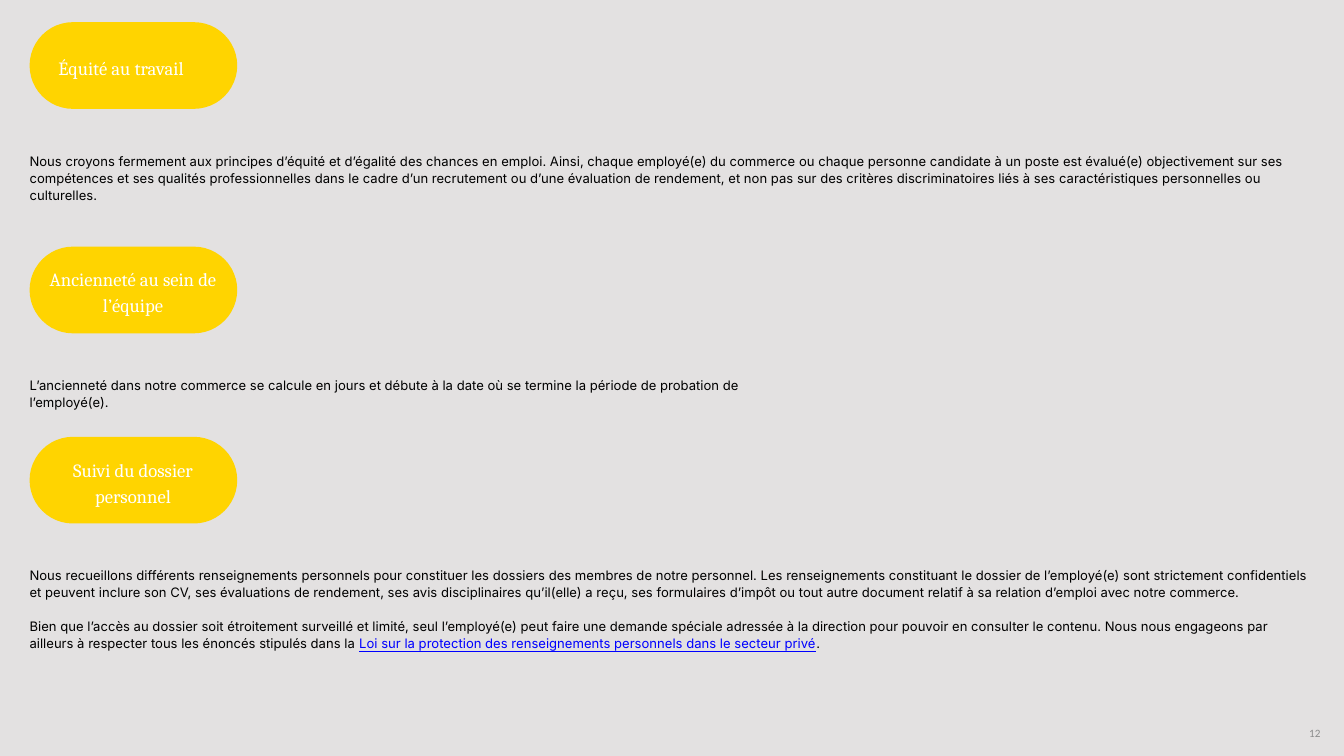
from pptx import Presentation
from pptx.dml.color import RGBColor
from pptx.enum.shapes import MSO_SHAPE
from pptx.enum.text import MSO_ANCHOR, PP_ALIGN
from pptx.util import Emu, Pt

PX = 9144  # 100 px to the inch
COLORS = {"page": "E3E1E1", "pill": "FFD400", "title": "FFFFFF",
          "body": "000000", "link": "0000FF", "number": "8C8C8C"}
LEFT, WIDE = 44, 1913
PILL_WIDTH, PILL_HEIGHT = 309, 129


def px(*lengths):
    return [Emu(length * PX) for length in lengths]


def add_text(place, paragraphs, font, size, color, line=None, align=PP_ALIGN.LEFT):
    """Each paragraph is a list of spans; returns the text frame."""
    frame = page.shapes.add_textbox(*px(*place)).text_frame
    frame.word_wrap = True
    frame.margin_left = frame.margin_right = frame.margin_top = frame.margin_bottom = 0
    for index, spans in enumerate(paragraphs):
        paragraph = frame.add_paragraph() if index else frame.paragraphs[0]
        paragraph.alignment = align
        if line:
            paragraph.line_spacing = Pt(line)
        if index:
            paragraph.space_before = Pt(line)
        for words in spans:
            span = paragraph.add_run()
            span.text = words
            span.font.name = font
            span.font.size = Pt(size)
            span.font.color.rgb = RGBColor.from_string(COLORS[color])
    return frame


deck = Presentation()
deck.slide_width, deck.slide_height = px(2000, 1125)
page = deck.slides.add_slide(deck.slide_layouts[6])
page.background.fill.solid()
page.background.fill.fore_color.rgb = RGBColor.from_string(COLORS["page"])

# Section headings on yellow pills: pill top, text place, words, alignment
headings = [
    (33, (87, 79, 224, 36), "Équité au travail", PP_ALIGN.LEFT),
    (367, (68, 393, 260, 75), "Ancienneté au sein de l’équipe", PP_ALIGN.CENTER),
    (650, (68, 677, 260, 75), "Suivi du dossier personnel", PP_ALIGN.CENTER),
]
for top, place, words, align in headings:
    pill = page.shapes.add_shape(MSO_SHAPE.ROUNDED_RECTANGLE,
                                 *px(LEFT, top, PILL_WIDTH, PILL_HEIGHT))
    pill.adjustments[0] = 0.5
    pill.shadow.inherit = False
    pill.fill.solid()
    pill.fill.fore_color.rgb = RGBColor.from_string(COLORS["pill"])
    pill.line.fill.background()
    add_text(place, [[words]], "Cambria", 20, "title", 28, align)

# Body text: place, paragraphs
bodies = [
    ((LEFT, 226, WIDE, 74), [[
        "Nous croyons fermement aux principes d’équité et d’égalité des chances en emploi. "
        "Ainsi, chaque employé(e) du commerce ou chaque personne candidate à un poste est "
        "évalué(e) objectivement sur ses compétences et ses qualités professionnelles dans "
        "le cadre d’un recrutement ou d’une évaluation de rendement, et non pas sur des "
        "critères discriminatoires liés à ses caractéristiques personnelles ou culturelles."]]),
    ((LEFT, 560, 1177, 49), [[
        "L’ancienneté dans notre commerce se calcule en jours et débute à la date où se "
        "termine la période de probation de l’employé(e)."]]),
    ((LEFT, 843, WIDE, 125), [[
        "Nous recueillons différents renseignements personnels pour constituer les dossiers "
        "des membres de notre personnel. Les renseignements constituant le dossier de "
        "l’employé(e) sont strictement confidentiels et peuvent inclure son CV, ses "
        "évaluations de rendement, ses avis disciplinaires qu’il(elle) a reçu, ses "
        "formulaires d’impôt ou tout autre document relatif à sa relation d’emploi avec "
        "notre commerce."], [
        "Bien que l’accès au dossier soit étroitement surveillé et limité, seul l’employé(e) "
        "peut faire une demande spéciale adressée à la direction pour pouvoir en consulter "
        "le contenu. Nous nous engageons par ailleurs à respecter tous les énoncés stipulés "
        "dans la ",
        "Loi sur la protection des renseignements personnels dans le secteur privé",
        "."]]),
]
for place, paragraphs in bodies:
    body = add_text(place, paragraphs, "Inter", 14, "body", 18.2)

# The law cited in the last paragraph
law = body.paragraphs[-1].runs[1]
law.font.underline = True
law.font.color.rgb = RGBColor.from_string(COLORS["link"])

# Page number
number = add_text((1742, 1071, 223, 40), [["12"]], "Calibri", 12, "number",
                  align=PP_ALIGN.RIGHT)
number.vertical_anchor = MSO_ANCHOR.MIDDLE

deck.save("out.pptx")
